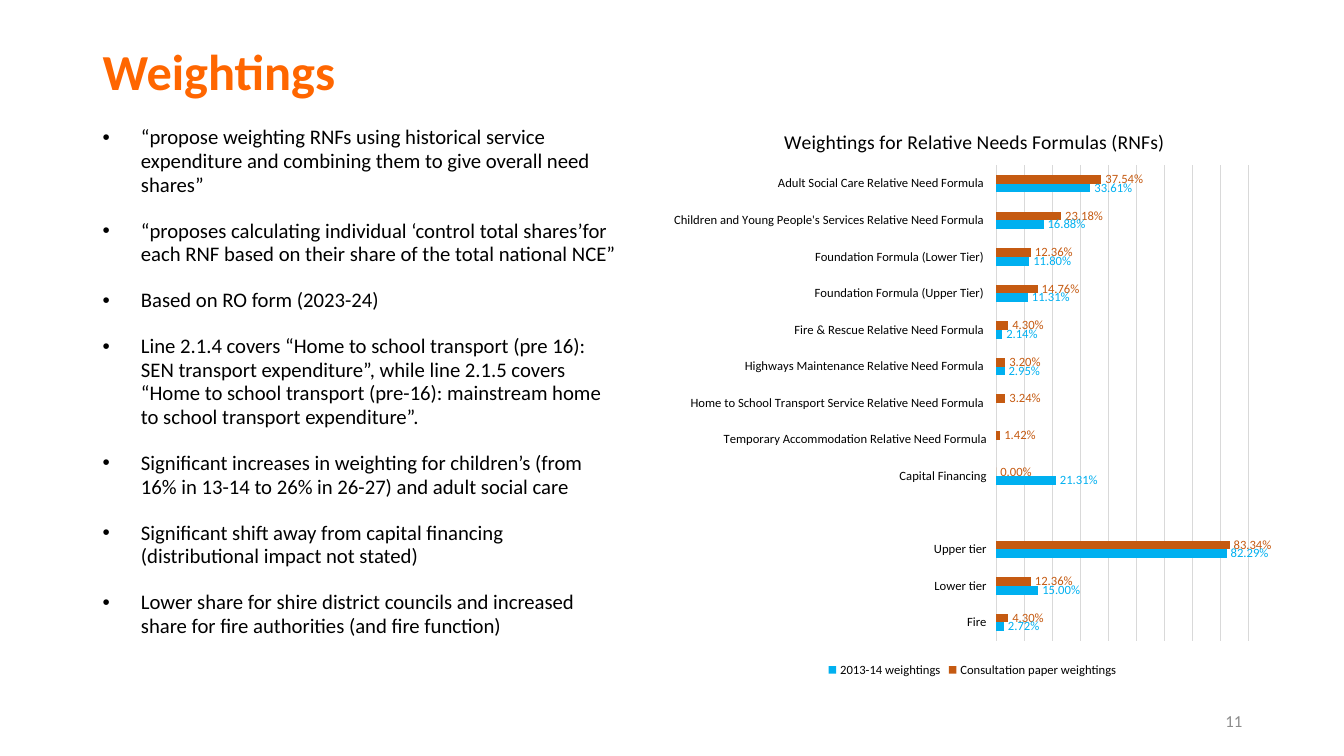
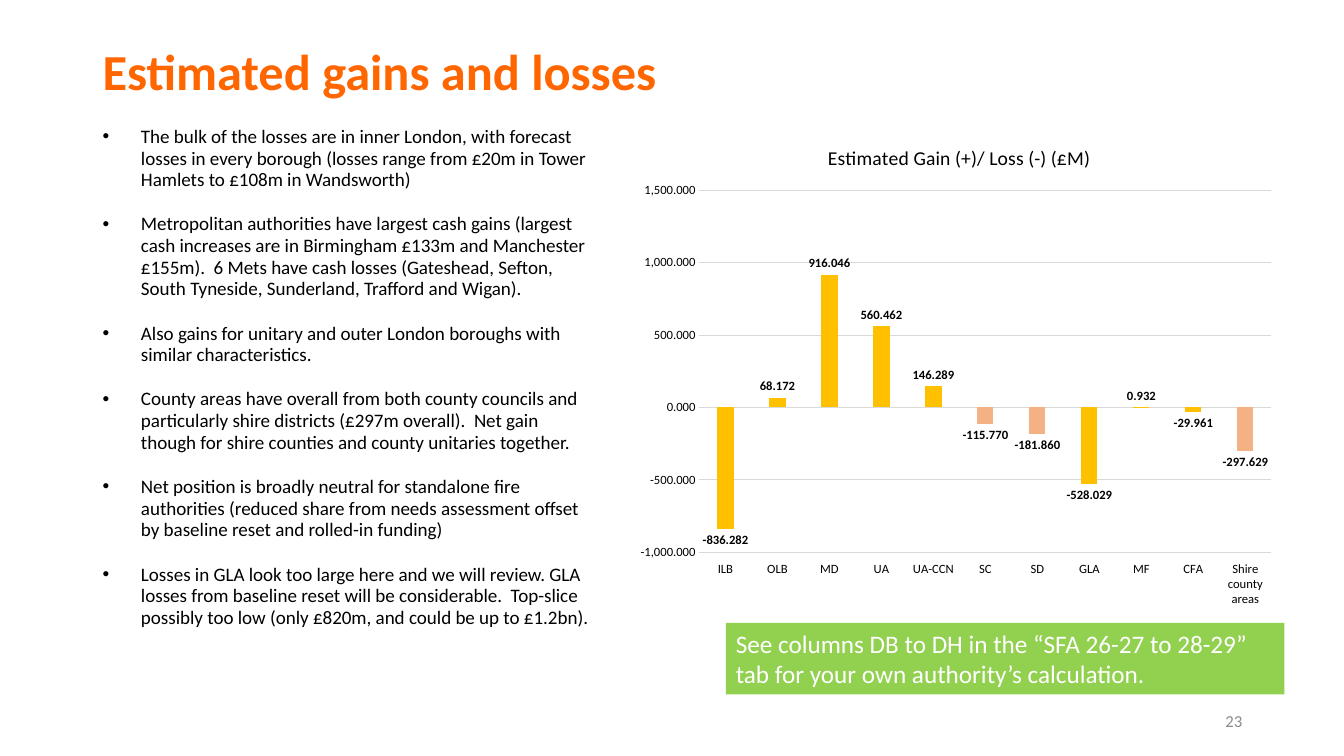
from dataclasses import dataclass, field
from typing import Any, Optional

from lxml.etree import SubElement
from pptx import Presentation
from pptx.chart.chart import Chart
from pptx.chart.data import CategoryChartData
from pptx.dml.color import RGBColor
from pptx.enum.chart import (XL_CHART_TYPE, XL_LABEL_POSITION,
                             XL_LEGEND_POSITION, XL_TICK_LABEL_POSITION,
                             XL_TICK_MARK)
from pptx.enum.shapes import MSO_SHAPE
from pptx.enum.text import MSO_ANCHOR, MSO_AUTO_SIZE, PP_ALIGN
from pptx.oxml.ns import qn
from pptx.slide import Slide
from pptx.text.text import Font, TextFrame
from pptx.util import Inches, Pt


@dataclass(frozen=True)
class Theme:
    font: str = "Calibri"
    heading: str = "FF6600"
    ink: str = "000000"
    muted: str = "8C8C8C"
    paper: str = "FFFFFF"
    grid: str = "D9D9D9"
    consultation: str = "C55A11"
    baseline: str = "00B0F0"
    gain: str = "FFC000"
    shire: str = "F4B183"
    callout: str = "92D050"
    heading_size: float = 36
    callout_size: float = 18
    chart_title_size: float = 14
    page_size: float = 12
    chart_size: float = 10
    label_size: float = 9


THEME = Theme()


@dataclass(frozen=True)
class Box:
    left: float
    top: float
    width: float
    height: float

    def lengths(self) -> tuple:
        return tuple(Inches(v) for v in (self.left, self.top, self.width, self.height))


@dataclass(frozen=True)
class Measure:
    name: str
    values: tuple
    color: str
    label_color: str
    label_bold: bool = False
    point_colors: dict = field(default_factory=dict)


@dataclass(frozen=True)
class ChartSpec:
    kind: Any
    box: Box
    title: str
    title_at: tuple
    plot_area: tuple
    categories: tuple
    measures: tuple
    number_format: str
    scale: dict
    overlap: int
    value_axis_shown: bool
    reversed_categories: bool
    legend: bool


@dataclass(frozen=True)
class Page:
    number: str
    heading: str
    points: tuple
    points_box: Box
    points_size: float
    chart: ChartSpec
    callout: Optional[str] = None


HEADING_BOX = Box(0.92, 0.41, 11.5, 0.66)
NUMBER_BOX = Box(9.42, 6.95, 3, 0.4)
CALLOUT_BOX = Box(7.2, 6.18, 5.54, 0.71)


def rgb(color: str) -> RGBColor:
    return RGBColor.from_string(color)


def apply(target: Any, values: dict) -> None:
    for name, value in values.items():
        setattr(target, name, value)


def style_font(font: Font, size: float, color: str, bold: bool = False) -> None:
    apply(font, {"name": THEME.font, "size": Pt(size), "bold": bold})
    font.color.rgb = rgb(color)


def write(frame: TextFrame, text: str, size: float, color: str,
          bold: bool = False, **paragraph_format: Any) -> None:
    frame.word_wrap = True
    paragraph = frame.paragraphs[0]
    apply(paragraph, paragraph_format)
    run = paragraph.add_run()
    run.text = text
    style_font(run.font, size, color, bold)


def add_label(slide: Slide, box: Box, text: str, size: float, color: str,
              bold: bool = False, **paragraph_format: Any) -> None:
    frame = slide.shapes.add_textbox(*box.lengths()).text_frame
    frame.vertical_anchor = MSO_ANCHOR.MIDDLE
    write(frame, text, size, color, bold, **paragraph_format)


def add_points(slide: Slide, page: Page) -> None:
    frame = slide.shapes.add_textbox(*page.points_box.lengths()).text_frame
    frame.word_wrap = True
    for index, point in enumerate(page.points):
        paragraph = frame.add_paragraph() if index else frame.paragraphs[0]
        properties = paragraph._p.get_or_add_pPr()
        properties.set("marL", str(Inches(0.38)))
        properties.set("indent", str(-Inches(0.38)))
        SubElement(properties, qn("a:buFont")).set("typeface", "Arial")
        SubElement(properties, qn("a:buChar")).set("char", "•")
        apply(paragraph, {"line_spacing": 0.95, "space_after": Pt(6),
                          "space_before": Pt(10 if index else 0)})
        run = paragraph.add_run()
        run.text = point
        style_font(run.font, page.points_size, THEME.ink)


def place(parent: Any, index: int, **fractions: float) -> None:
    for previous in parent.findall(qn("c:layout")):
        parent.remove(previous)
    layout = SubElement(parent, qn("c:layout"))
    parent.insert(index, layout)
    manual = SubElement(layout, qn("c:manualLayout"))
    settings = {"xMode": "edge", "yMode": "edge", **fractions}
    if "w" in fractions:
        settings = {"layoutTarget": "inner", **settings}
    for name, value in settings.items():
        SubElement(manual, qn(f"c:{name}")).set("val", str(value))


def style_axes(chart: Chart, spec: ChartSpec) -> None:
    categories, values = chart.category_axis, chart.value_axis
    no_ticks = {"major_tick_mark": XL_TICK_MARK.NONE,
                "minor_tick_mark": XL_TICK_MARK.NONE}
    apply(categories, {**no_ticks, "has_major_gridlines": False,
                       "reverse_order": spec.reversed_categories,
                       "tick_label_position": XL_TICK_LABEL_POSITION.LOW})
    apply(values, {**no_ticks, **spec.scale, "has_major_gridlines": True,
                   "visible": spec.value_axis_shown})
    apply(values.tick_labels, {"number_format": spec.number_format,
                               "number_format_is_linked": False})
    values.format.line.fill.background()
    for line in (categories.format.line, values.major_gridlines.format.line):
        line.color.rgb = rgb(THEME.grid)
        line.width = Pt(0.75)
    for axis in (categories, values):
        style_font(axis.tick_labels.font, THEME.label_size, THEME.ink)


def style_measure(series: Any, measure: Measure, number_format: str) -> None:
    series.invert_if_negative = False
    series.format.fill.solid()
    series.format.fill.fore_color.rgb = rgb(measure.color)
    for index, color in measure.point_colors.items():
        fill = series.points[index].format.fill
        fill.solid()
        fill.fore_color.rgb = rgb(color)
    labels = series.data_labels
    apply(labels, {"show_value": True, "number_format": number_format,
                   "number_format_is_linked": False,
                   "position": XL_LABEL_POSITION.OUTSIDE_END})
    style_font(labels.font, THEME.label_size, measure.label_color, measure.label_bold)


def add_weighted_chart(slide: Slide, spec: ChartSpec) -> None:
    data = CategoryChartData(number_format=spec.number_format)
    data.categories = spec.categories
    for measure in spec.measures:
        data.add_series(measure.name, measure.values)
    chart = slide.shapes.add_chart(spec.kind, *spec.box.lengths(), data).chart
    style_font(chart.font, THEME.chart_size, THEME.ink)
    chart.has_title = True
    write(chart.chart_title.text_frame, spec.title, THEME.chart_title_size, THEME.ink)
    place(chart.chart_title._element, 1, **dict(zip("xy", spec.title_at)))
    place(chart._chartSpace.chart.plotArea, 0, **dict(zip("xywh", spec.plot_area)))
    chart.has_legend = spec.legend
    if spec.legend:
        apply(chart.legend, {"position": XL_LEGEND_POSITION.BOTTOM,
                             "include_in_layout": False})
        style_font(chart.legend.font, THEME.label_size, THEME.ink)
    plot = chart.plots[0]
    apply(plot, {"gap_width": 219, "overlap": spec.overlap, "vary_by_categories": False})
    style_axes(chart, spec)
    for series, measure in zip(plot.series, spec.measures):
        style_measure(series, measure, spec.number_format)


def add_callout(slide: Slide, text: str) -> None:
    callout = slide.shapes.add_shape(MSO_SHAPE.RECTANGLE, *CALLOUT_BOX.lengths())
    callout.shadow.inherit = False
    callout.fill.solid()
    callout.fill.fore_color.rgb = rgb(THEME.callout)
    callout.line.fill.background()
    apply(callout.text_frame, {"vertical_anchor": MSO_ANCHOR.TOP,
                               "auto_size": MSO_AUTO_SIZE.SHAPE_TO_FIT_TEXT})
    write(callout.text_frame, text, THEME.callout_size, THEME.paper,
          alignment=PP_ALIGN.LEFT)


PAGES = (
    Page("11", "Weightings", (
        "“propose weighting RNFs using historical service expenditure and combining them to give overall need shares”",
        "“proposes calculating individual ‘control total shares’for each RNF based on their share of the total national NCE”",
        "Based on RO form (2023-24)",
        "Line 2.1.4 covers “Home to school transport (pre 16): SEN transport expenditure”, while line 2.1.5 covers “Home to school transport (pre-16): mainstream home to school transport expenditure”.",
        "Significant increases in weighting for children’s (from 16% in 13-14 to 26% in 26-27) and adult social care",
        "Significant shift away from capital financing (distributional impact not stated)",
        "Lower share for shire district councils and increased share for fire authorities (and fire function)",
    ), Box(0.92, 1.2, 5.3, 5.55), 14.8, ChartSpec(
        XL_CHART_TYPE.BAR_CLUSTERED, Box(6.67, 1.01, 5.95, 5.75),
        "Weightings for Relative Needs Formulas (RNFs)", (0.18, 0.04),
        (0.54, 0.11, 0.42, 0.82),
        ("Adult Social Care Relative Need Formula ",
         "Children and Young People's Services Relative Need Formula ",
         "Foundation Formula (Lower Tier) ", "Foundation Formula (Upper Tier) ",
         "Fire & Rescue Relative Need Formula ",
         "Highways Maintenance Relative Need Formula ",
         "Home to School Transport Service Relative Need Formula ",
         "Temporary Accommodation Relative Need Formula",
         "Capital Financing", "", "Upper tier", "Lower tier", "Fire"),
        (Measure("Consultation paper weightings",
                 (0.3754, 0.2318, 0.1236, 0.1476, 0.043, 0.032, 0.0324, 0.0142,
                  0, None, 0.8334, 0.1236, 0.043),
                 THEME.consultation, THEME.consultation),
         Measure("2013-14 weightings",
                 (0.3361, 0.1688, 0.118, 0.1131, 0.0214, 0.0295, None, None,
                  0.2131, None, 0.8229, 0.15, 0.0272),
                 THEME.baseline, THEME.baseline)),
        "0.00%", {"minimum_scale": 0, "maximum_scale": 0.9, "major_unit": 0.1},
        overlap=0, value_axis_shown=False, reversed_categories=True, legend=True)),
    Page("23", "Estimated gains and losses", (
        "The bulk of the losses are in inner London, with forecast losses in every borough (losses range from £20m in Tower Hamlets to £108m in Wandsworth)",
        "Metropolitan authorities have largest cash gains (largest cash increases are in Birmingham £133m and Manchester £155m).  6 Mets have cash losses (Gateshead, Sefton, South Tyneside, Sunderland, Trafford and Wigan).",
        "Also gains for unitary and outer London boroughs with similar characteristics.",
        "County areas have overall from both county councils and particularly shire districts (£297m overall).  Net gain though for shire counties and county unitaries together.",
        "Net position is broadly neutral for standalone fire authorities (reduced share from needs assessment offset by baseline reset and rolled-in funding)",
        "Losses in GLA look too large here and we will review. GLA losses from baseline reset will be considerable.  Top-slice possibly too low (only £820m, and could be up to £1.2bn).",
    ), Box(0.92, 1.2, 5.1, 5.75), 13.6, ChartSpec(
        XL_CHART_TYPE.COLUMN_CLUSTERED, Box(6.22, 1.2, 6.52, 4.92),
        "Estimated Gain (+)/ Loss (-) (£M)", (0.3, 0.04),
        (0.11, 0.14, 0.87, 0.73),
        ("ILB", "OLB", "MD", "UA", "UA-CCN", "SC", "SD", "GLA", "MF", "CFA",
         "Shire county areas"),
        (Measure("Series 1",
                 (-836.282, 68.172, 916.046, 560.462, 146.289, -115.77, -181.86,
                  -528.029, 0.932, -29.961, -297.629),
                 THEME.gain, THEME.ink, True, dict.fromkeys((5, 6, 10), THEME.shire)),),
        "#,##0.000",
        {"minimum_scale": -1000, "maximum_scale": 1500, "major_unit": 500},
        overlap=-27, value_axis_shown=True, reversed_categories=False, legend=False),
        "See columns DB to DH in the “SFA 26-27 to 28-29” tab for your own authority’s calculation."),
)


def main() -> None:
    deck = Presentation()
    apply(deck, {"slide_width": Inches(13.33), "slide_height": Inches(7.5)})
    for page in PAGES:
        slide = deck.slides.add_slide(deck.slide_layouts[6])
        add_label(slide, HEADING_BOX, page.heading, THEME.heading_size,
                  THEME.heading, True, line_spacing=0.9)
        add_label(slide, NUMBER_BOX, page.number, THEME.page_size,
                  THEME.muted, alignment=PP_ALIGN.RIGHT)
        add_weighted_chart(slide, page.chart)
        add_points(slide, page)
        if page.callout:
            add_callout(slide, page.callout)
    deck.save("out.pptx")


if __name__ == "__main__":
    main()
